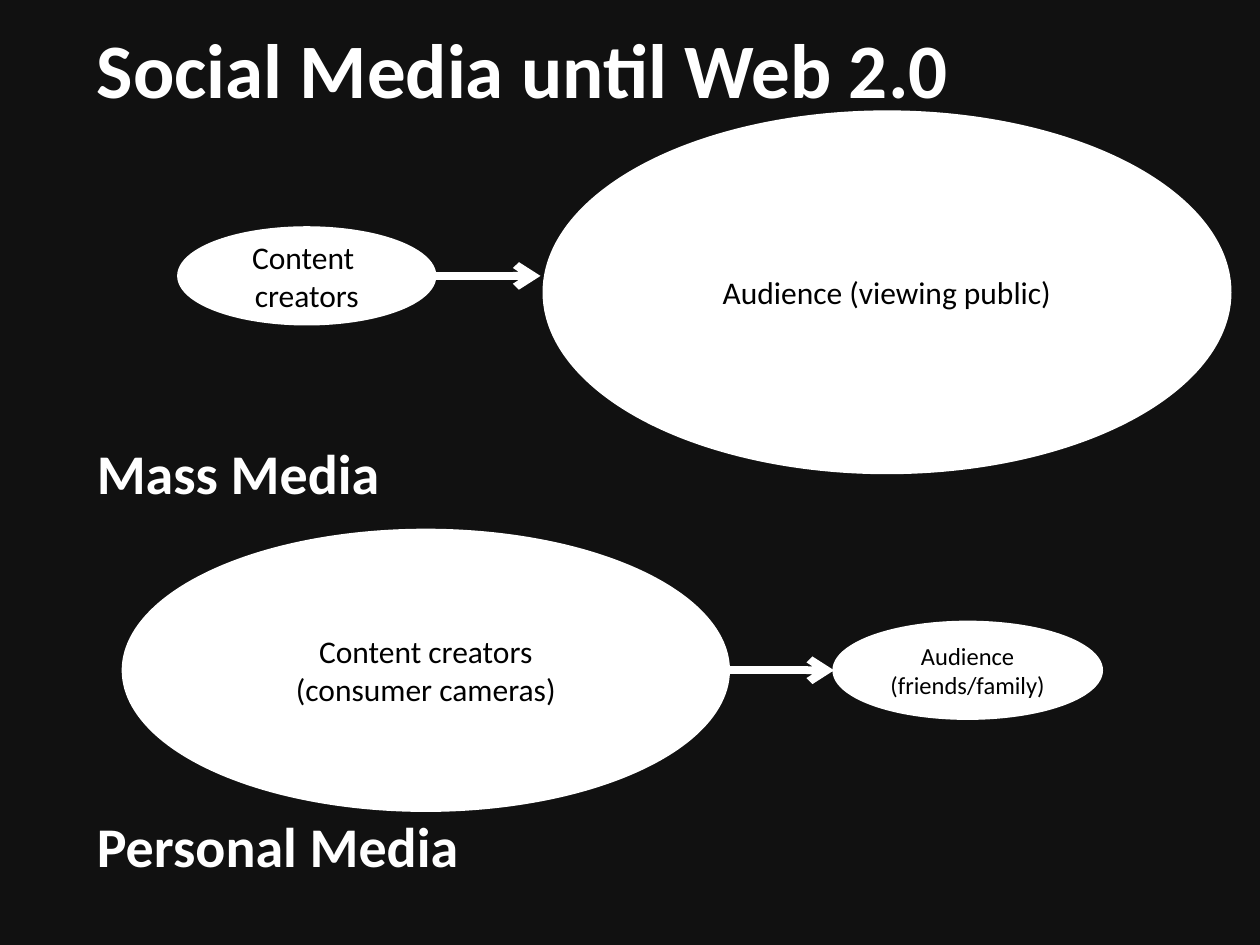
import dataclasses

import pptx
import pptx.dml.color
import pptx.enum.shapes
import pptx.enum.text
import pptx.oxml
import pptx.oxml.ns
import pptx.util
from pptx.util import Inches


@dataclasses.dataclass(frozen=True)
class Theme:
    """Colours, type sizes and line widths of the slide."""
    background: str = "111111"
    light: str = "FFFFFF"
    dark: str = "000000"
    font: str = "Calibri"
    title: int = 44
    heading: int = 32
    label: int = 18
    small: int = 14
    outline: float = 2
    arrow: float = 4.5


@dataclasses.dataclass(frozen=True)
class Box:
    """A rectangle on the slide."""
    left: int
    top: int
    width: int
    height: int

    @property
    def right(self):
        """Return the right edge."""
        return self.left + self.width

    @property
    def middle(self):
        """Return the vertical centre."""
        return self.top + self.height // 2

    @property
    def place(self):
        """Return the values in the order python-pptx takes them."""
        return self.left, self.top, self.width, self.height


THEME = Theme()


def colour(value):
    """Turn a hex value into a colour."""
    return pptx.dml.color.RGBColor.from_string(value)


def write(shape, lines, size, ink, bold=False, align=None):
    """Write lines into one vertically centred paragraph."""
    frame = shape.text_frame
    frame.word_wrap = True
    frame.vertical_anchor = pptx.enum.text.MSO_ANCHOR.MIDDLE
    para = frame.paragraphs[0]
    para.alignment = align
    for index, line in enumerate(lines):
        if index:
            para.add_line_break()
        span = para.add_run()
        span.text = line
        span.font.name = THEME.font
        span.font.size = pptx.util.Pt(size)
        span.font.bold = bold
        span.font.color.rgb = colour(ink)


def add_heading(page, box, text, size):
    """Place a bold heading in its box."""
    shape = page.shapes.add_textbox(*box.place)
    write(shape, [text], size, THEME.light, bold=True)


def add_group(page, box, lines, size):
    """Place an ellipse that stands for a group of people."""
    shape = page.shapes.add_shape(pptx.enum.shapes.MSO_SHAPE.OVAL, *box.place)
    shape.shadow.inherit = False
    shape.fill.solid()
    shape.fill.fore_color.rgb = colour(THEME.light)
    shape.line.color.rgb = colour(THEME.light)
    shape.line.width = pptx.util.Pt(THEME.outline)
    write(shape, lines, size, THEME.dark, align=pptx.enum.text.PP_ALIGN.CENTER)


def add_arrow(page, left, middle, length):
    """Draw a horizontal arrow pointing right."""
    arrow = page.shapes.add_connector(
        pptx.enum.shapes.MSO_CONNECTOR.STRAIGHT, left, middle, left + length, middle)
    arrow.line.color.rgb = colour(THEME.light)
    arrow.line.width = pptx.util.Pt(THEME.arrow)
    head = pptx.oxml.parse_xml(f'<a:tailEnd {pptx.oxml.ns.nsdecls("a")} type="arrow"/>')
    arrow.line._get_or_add_ln().append(head)
    effects = pptx.oxml.parse_xml(f'<a:effectLst {pptx.oxml.ns.nsdecls("a")}/>')
    arrow._element.spPr.append(effects)


def add_media_flow(page, heading_box, heading, creators, audience):
    """Place a heading and the flow from creators to audience."""
    add_heading(page, heading_box, heading, THEME.heading)
    add_group(page, *creators)
    add_arrow(page, creators[0].right, creators[0].middle, Inches(0.84))
    add_group(page, *audience)


def main():
    """Build and save the slide."""
    deck = pptx.Presentation()
    deck.slide_width, deck.slide_height = Inches(10), Inches(7.5)
    page = deck.slides.add_slide(deck.slide_layouts[6])
    page.background.fill.solid()
    page.background.fill.fore_color.rgb = colour(THEME.background)

    title_box, mass_box, personal_box = (
        Box(Inches(0.67), Inches(top), Inches(9.33), Inches(0.92))
        for top in (0.08, 3.29, 6.25))
    add_heading(page, title_box, "Social Media until Web 2.0", THEME.title)
    add_media_flow(
        page, mass_box, "Mass Media",
        (Box(Inches(1.42), Inches(1.81), Inches(2.03), Inches(0.76)),
         ["Content ", "creators"], THEME.label),
        (Box(Inches(4.32), Inches(0.89), Inches(5.44), Inches(2.86)),
         ["Audience (viewing public)"], THEME.label))
    add_media_flow(
        page, personal_box, "Personal Media",
        (Box(Inches(0.98), Inches(4.21), Inches(4.8), Inches(2.22)),
         ["Content creators", "(consumer cameras)"], THEME.label),
        (Box(Inches(6.62), Inches(4.94), Inches(2.12), Inches(0.76)),
         ["Audience", "(friends/family)"], THEME.small))
    deck.save("out.pptx")


if __name__ == "__main__":
    main()
